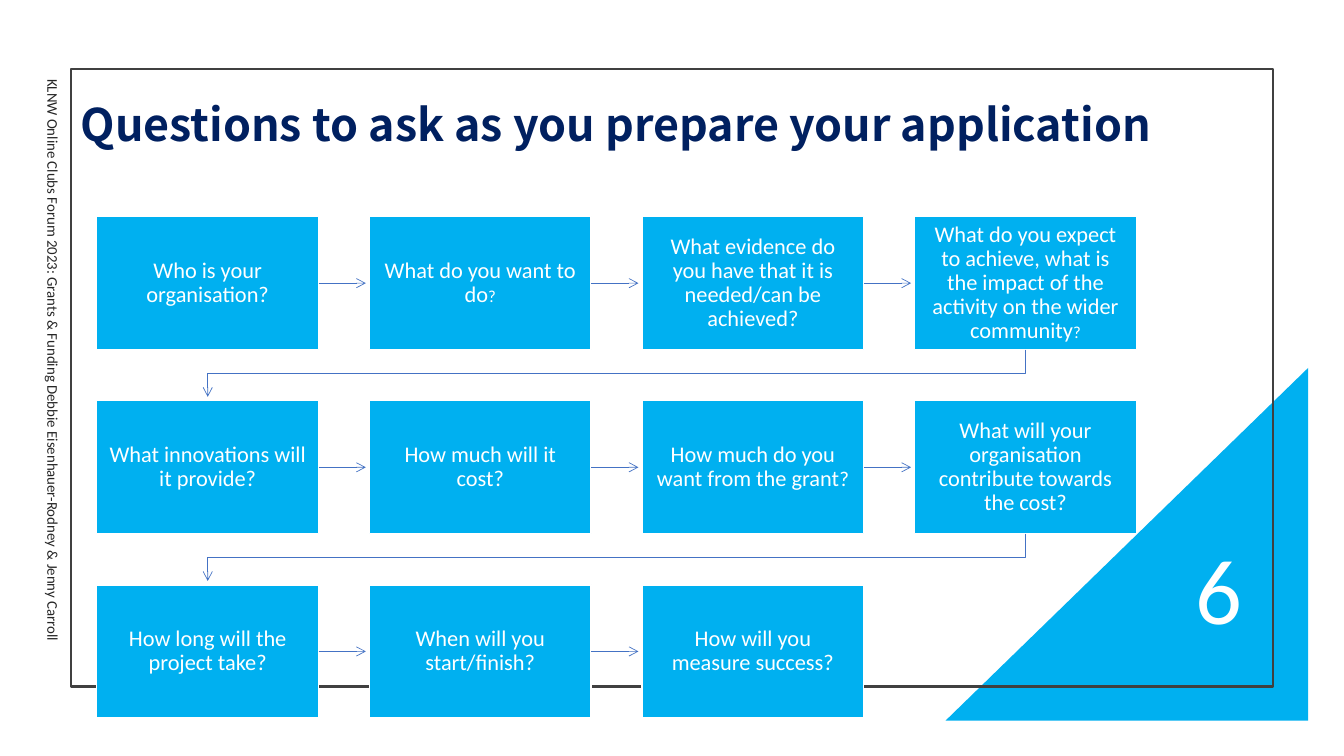
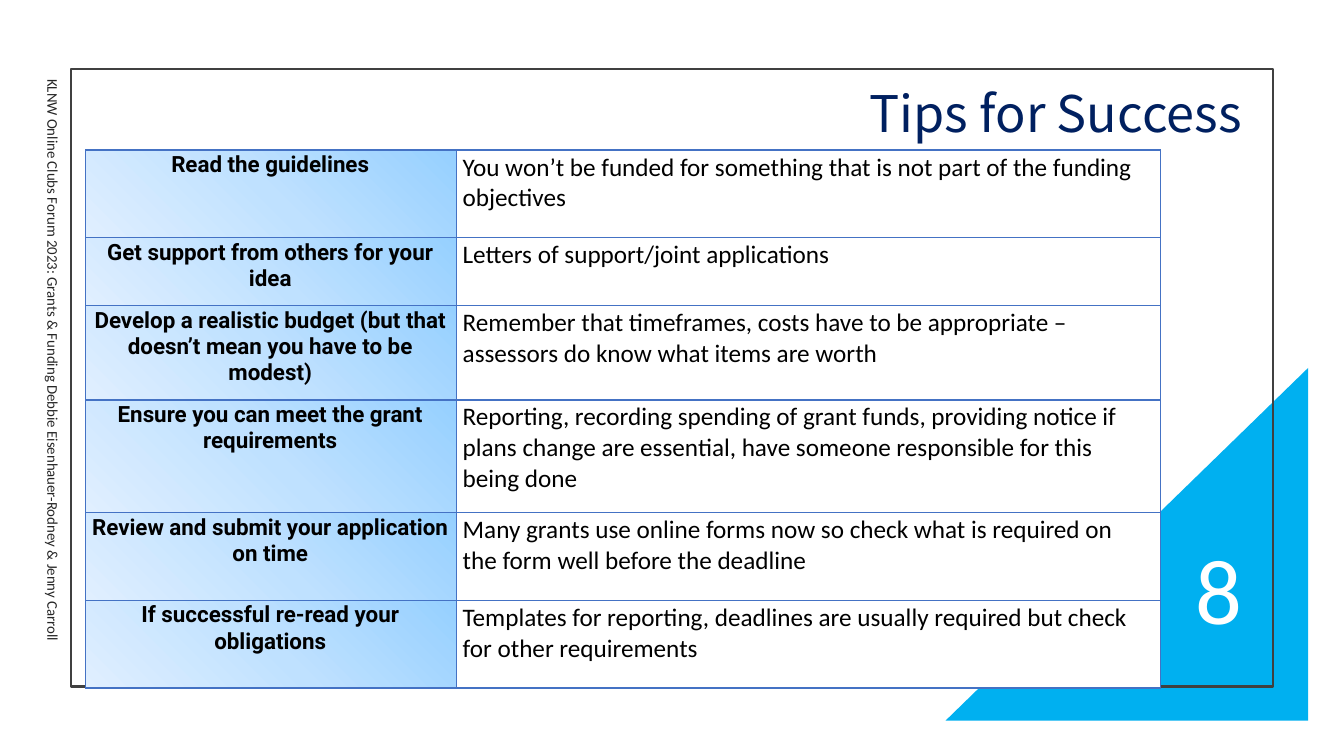
from dataclasses import dataclass

from lxml import etree
from pptx import Presentation
from pptx.dml.color import RGBColor
from pptx.enum import shapes, text
from pptx.oxml import parse_xml
from pptx.oxml.ns import qn
from pptx.util import Cm, Pt


@dataclass(frozen=True)
class Theme:
    sky: str = "00B0F0"
    navy: str = "002060"
    line: str = "4472C4"
    edge: str = "404040"
    note: str = "262626"
    white: str = "FFFFFF"
    black: str = "000000"
    fade: tuple = ("96D0FF", "BFE1FF", "E0EFFF")
    head: str = "Noto Sans CJK JP"
    body: str = "Calibri"
    label: str = "Roboto"
    side_size: float = 10.6
    box_size: int = 16
    mark_size: int = 12
    label_size: int = 16
    cell_size: int = 18
    page_size: int = 66


T = Theme()
LEFT, MID, RIGHT = text.PP_ALIGN.LEFT, text.PP_ALIGN.CENTER, text.PP_ALIGN.RIGHT
DRAWING = "http://schemas.openxmlformats.org/drawingml/2006/main"


def write(frame, runs, font, color, align=LEFT, bold=False, space=None):
    """Fill the first paragraph with (words, size) runs."""
    frame.word_wrap = True
    para = frame.paragraphs[0]
    para.alignment = align
    para.line_spacing = space
    for words, size in runs:
        run = para.add_run()
        run.text = words
        run.font.name = font
        run.font.size = Pt(size)
        run.font.bold = bold
        run.font.color.rgb = RGBColor.from_string(color)


def link(slide, kind, x1, y1, x2, y2):
    """Add a thin arrow without a shadow."""
    arrow = slide.shapes.add_connector(kind, Cm(x1), Cm(y1), Cm(x2), Cm(y2))
    arrow.line.width = Pt(0.5)
    arrow.line.color.rgb = RGBColor.from_string(T.line)
    props = arrow._element.spPr
    etree.SubElement(props.find(qn("a:ln")), qn("a:tailEnd"), type="arrow")
    etree.SubElement(props, qn("a:effectLst"))
    return arrow


deck = Presentation()
deck.slide_width, deck.slide_height = Cm(33.87), Cm(19.05)

# Shared frame, side note, title and page number
pages = [
    ("Questions to ask as you prepare your application", 32, True, LEFT,
     (1.78, 1.73, 29.67, 2.95), "6"),
    ("Tips for Success", 36, False, RIGHT, (6.88, 2.08, 24.66, 1.7), "8"),
]
for title, size, bold, align, place, number in pages:
    slide = deck.slides.add_slide(deck.slide_layouts[6])

    corner = slide.shapes.add_shape(shapes.MSO_SHAPE.RIGHT_TRIANGLE,
                                    Cm(23.83), Cm(9.27), Cm(9.14), Cm(8.89))
    corner.shadow.inherit = False
    corner.fill.solid()
    corner.fill.fore_color.rgb = RGBColor.from_string(T.sky)
    corner.line.fill.background()
    corner._element.spPr.xfrm.set("flipH", "1")

    border = slide.shapes.add_shape(shapes.MSO_SHAPE.RECTANGLE,
                                    Cm(1.78), Cm(1.73), Cm(30.3), Cm(15.57))
    border.shadow.inherit = False
    border.fill.background()
    border.line.color.rgb = RGBColor.from_string(T.edge)
    border.line.width = Pt(1.5)

    head = slide.shapes.add_textbox(*map(Cm, place))
    head.text_frame.vertical_anchor = text.MSO_ANCHOR.MIDDLE
    write(head.text_frame, [(title, size)], T.head, T.navy, align, bold, 0.9)

    side = slide.shapes.add_textbox(Cm(-6.6), Cm(9.02), Cm(15.57), Cm(1.02))
    side.rotation = 90
    write(side.text_frame,
          [("KLNW Online Clubs Forum 2023: Grants & Funding "
            "Debbie Eisenhauer-Rodney & Jenny Carroll", T.side_size)],
          T.body, T.note)

    page = slide.shapes.add_textbox(Cm(26.9), Cm(13.59), Cm(4.65), Cm(2.79))
    page.text_frame.vertical_anchor = text.MSO_ANCHOR.MIDDLE
    write(page.text_frame, [(number, T.page_size)], T.body, T.white, RIGHT, space=0.9)

flow, tips = deck.slides

# Question flow: four boxes a row; a question may end in a smaller mark
asks = [
    ("Who is your organisation?",),
    ("What do you want to do", T.mark_size),
    ("What evidence do you have that it is needed/can be achieved?",),
    ("What do you expect to achieve, what is the impact of the activity "
     "on the wider community", T.mark_size),
    ("What innovations will it provide?",),
    ("How much will it cost?",),
    ("How much do you want from the grant", 15),
    ("What will your organisation contribute towards the cost?",),
    ("How long will the project take?",),
    ("When will you start/finish?",),
    ("How will you measure success?",),
]
COLS = 4
LEFT_X, TOP_Y, WIDE, HIGH, STEP_X, STEP_Y = 2.44, 5.46, 5.59, 3.35, 6.87, 4.64
REACH = 1.19

for i, (words, *mark) in enumerate(asks):
    row, col = divmod(i, COLS)
    x, y = LEFT_X + col * STEP_X, TOP_Y + row * STEP_Y
    box = flow.shapes.add_shape(shapes.MSO_SHAPE.RECTANGLE,
                                Cm(x), Cm(y), Cm(WIDE), Cm(HIGH))
    box.shadow.inherit = False
    box.fill.solid()
    box.fill.fore_color.rgb = RGBColor.from_string(T.sky)
    box.line.color.rgb = RGBColor.from_string(T.white)
    box.line.width = Pt(1)
    frame = box.text_frame
    frame.margin_left = frame.margin_right = Cm(0.28)
    frame.margin_top = frame.margin_bottom = Cm(0.28)
    frame.vertical_anchor = text.MSO_ANCHOR.MIDDLE
    runs = [(words, T.box_size)] + [("?", size) for size in mark]
    write(frame, runs, T.body, T.white, MID, space=0.9)

    if i == len(asks) - 1:
        continue
    if col < COLS - 1:
        edge, mid = x + WIDE, y + HIGH / 2
        link(flow, shapes.MSO_CONNECTOR.STRAIGHT, edge, mid, edge + REACH, mid)
    else:
        # A quarter turn makes the elbow leave downwards and end downwards
        span = col * STEP_X
        cx, cy = LEFT_X + (WIDE + span) / 2, y + HIGH + REACH / 2
        bend = link(flow, shapes.MSO_CONNECTOR.ELBOW, cx - REACH / 2, cy - span / 2,
                    cx + REACH / 2, cy + span / 2)
        bend._element.spPr.xfrm.set("rot", "5400000")

# Tips table
rows = [
    (2.21, "Read the guidelines",
     "You won’t be funded for something that is not part of the funding objectives"),
    (1.47, "Get support from others for your idea",
     "Letters of support/joint applications"),
    (2.21, "Develop a realistic budget (but that doesn’t mean you have to be modest)",
     "Remember that timeframes, costs have to be appropriate – assessors do know "
     "what items are worth"),
    (2.84, "Ensure you can meet the grant requirements",
     "Reporting, recording spending of grant funds, providing notice if plans change "
     "are essential, have someone responsible for this being done"),
    (2.21, "Review and submit your application on time",
     "Many grants use online forms now so check what is required on the form well "
     "before the deadline"),
    (2.21, "If successful re-read your obligations",
     "Templates for reporting, deadlines are usually required but check for other "
     "requirements"),
]
widths = (9.35, 17.73)
stops = "".join(f'<a:gs pos="{n * 50000}"><a:srgbClr val="{c}"/></a:gs>'
                for n, c in enumerate(T.fade))
fade = (f'<a:gradFill xmlns:a="{DRAWING}"><a:gsLst>{stops}</a:gsLst>'
        '<a:path path="circle"><a:fillToRect l="100000" b="100000"/></a:path>'
        '<a:tileRect t="-100000" r="-100000"/></a:gradFill>')

grid = tips.shapes.add_table(len(rows), len(widths), Cm(2.16), Cm(3.78),
                             Cm(sum(widths)), Cm(sum(r[0] for r in rows))).table
for col, width in zip(grid.columns, widths):
    col.width = Cm(width)
for r, (height, *pair) in enumerate(rows):
    grid.rows[r].height = Cm(height)
    for c, words in enumerate(pair):
        cell = grid.cell(r, c)
        cell.margin_left, cell.margin_right = Cm(0.15), Cm(0.2)
        cell.margin_top, cell.margin_bottom = Cm(0.05), Cm(0.3)
        props = cell._tc.get_or_add_tcPr()
        for tag in ("lnL", "lnR", "lnT", "lnB"):
            props.append(parse_xml(
                f'<a:{tag} xmlns:a="{DRAWING}" w="{Pt(1)}"><a:solidFill>'
                f'<a:srgbClr val="{T.line}"/></a:solidFill></a:{tag}>'))
        if c == 0:
            props.append(parse_xml(fade))
            write(cell.text_frame, [(words, T.label_size)], T.label, T.black, MID, True)
        else:
            cell.fill.solid()
            cell.fill.fore_color.rgb = RGBColor.from_string(T.white)
            write(cell.text_frame, [(words, T.cell_size)], T.body, T.black)

deck.save("out.pptx")
